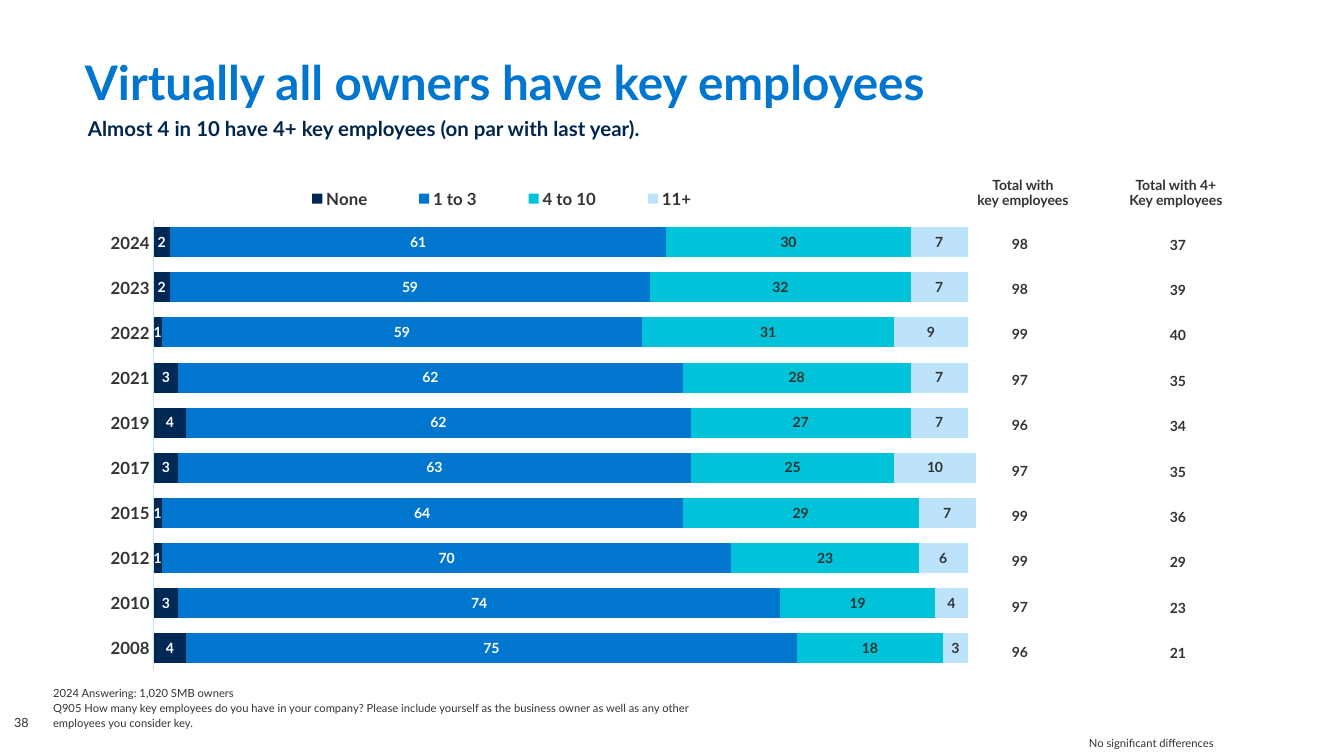
import pptx
import pptx.chart.data
import pptx.dml.color
import pptx.enum.chart
import pptx.enum.text
import pptx.oxml
import pptx.oxml.ns
import pptx.util

EMU_PER_PX = 914400 / 100.8
FONT = "Lato"
GREY, BLUE, NAVY, PALE = "333333", "0076CF", "00264C", "BDE3FC"

ALIGN = pptx.enum.text.PP_ALIGN
ANCHOR = pptx.enum.text.MSO_ANCHOR

YEARS = [2008, 2010, 2012, 2015, 2017, 2019, 2021, 2022, 2023, 2024]
# name, bar colour, label colour, percentages by year
SERIES = [
    ("None", "002855", "FFFFFF", [4, 3, 1, 1, 3, 4, 3, 1, 2, 2]),
    ("1 to 3", BLUE, "FFFFFF", [75, 74, 70, 64, 63, 62, 62, 59, 59, 61]),
    ("4 to 10", "00C3D9", GREY, [18, 19, 23, 29, 25, 27, 28, 31, 32, 30]),
    ("11+", PALE, GREY, [3, 4, 6, 7, 10, 7, 7, 9, 7, 7]),
]


def px(length):
    return pptx.util.Emu(round(length * EMU_PER_PX))


def rgb(code):
    return pptx.dml.color.RGBColor.from_string(code)


def set_all(target, values):
    for name, value in values.items():
        setattr(target, name, value)


def style_font(font, size, color=GREY, bold=False):
    set_all(font, {"name": FONT, "size": pptx.util.Pt(size), "bold": bold})
    font.color.rgb = rgb(color)


def add_text(page, place, lines, size, color=GREY, bold=False, inset=(0, 0),
             frame_format=None, para_format=None):
    box = page.shapes.add_textbox(*map(px, place))
    frame = box.text_frame
    side, end = map(px, inset)
    set_all(frame, {"word_wrap": True, "margin_left": side, "margin_right": side,
                    "margin_top": end, "margin_bottom": end})
    set_all(frame, frame_format or {})
    for index, line in enumerate(lines):
        para = frame.add_paragraph() if index else frame.paragraphs[0]
        set_all(para, para_format or {})
        span = para.add_run()
        span.text = line
        style_font(span.font, size, color, bold)


def add_totals(page, place, totals):
    table = page.shapes.add_table(len(totals), 1, *map(px, place)).table
    set_all(table, {"first_row": False, "horz_banding": False})
    for row, total in zip(table.rows, totals):
        cell = row.cells[0]
        cell.fill.background()
        set_all(cell, {"vertical_anchor": ANCHOR.MIDDLE, "margin_left": px(5),
                       "margin_right": px(5), "margin_top": px(5),
                       "margin_bottom": px(5)})
        para = cell.text_frame.paragraphs[0]
        para.alignment = ALIGN.CENTER
        span = para.add_run()
        span.text = str(total)
        style_font(span.font, 10, bold=True)


def make_layout(x, y, width, height, inner=False):
    """Manual placement of a chart part, in fractions of the chart area."""
    fields = [("layoutTarget", "inner")] if inner else []
    fields += [("xMode", "edge"), ("yMode", "edge"),
               ("x", x), ("y", y), ("w", width), ("h", height)]
    body = "".join(f'<c:{name} val="{value}"/>' for name, value in fields)
    return pptx.oxml.parse_xml(
        f'<c:layout {pptx.oxml.ns.nsdecls("c")}>'
        f'<c:manualLayout>{body}</c:manualLayout></c:layout>')


def replace_layout(parent, layout, index):
    for old in parent.findall(pptx.oxml.ns.qn("c:layout")):
        parent.remove(old)
    parent.insert(index, layout)


def add_bars(page, place):
    data = pptx.chart.data.CategoryChartData()
    data.categories = [str(year) for year in YEARS]
    for name, _, _, values in SERIES:
        data.add_series(name, values)
    kind = pptx.enum.chart.XL_CHART_TYPE.BAR_STACKED
    chart = page.shapes.add_chart(kind, *map(px, place), data).chart
    chart.has_title = False
    style_font(chart.font, 12)

    # Bars and their labels
    plot = chart.plots[0]
    set_all(plot, {"gap_width": 50, "overlap": 100, "vary_by_categories": False})
    for series, (_, color, label_color, _) in zip(plot.series, SERIES):
        series.format.fill.solid()
        series.format.fill.fore_color.rgb = rgb(color)
        labels = series.data_labels
        set_all(labels, {"show_value": True,
                         "position": pptx.enum.chart.XL_LABEL_POSITION.CENTER})
        style_font(labels.font, 10, label_color, True)

    # Axes
    years = chart.category_axis
    no_tick = pptx.enum.chart.XL_TICK_MARK.NONE
    set_all(years, {"major_tick_mark": no_tick, "minor_tick_mark": no_tick})
    style_font(years.tick_labels.font, 12, bold=True)
    years.format.line.color.rgb = rgb(PALE)
    years.format.line.width = pptx.util.Pt(0.75)
    set_all(chart.value_axis, {"visible": False, "has_major_gridlines": False,
                               "minimum_scale": 0, "maximum_scale": 120})

    # Legend and plot placement
    chart.has_legend = True
    legend = chart.legend
    set_all(legend, {"include_in_layout": False,
                     "position": pptx.enum.chart.XL_LEGEND_POSITION.TOP})
    style_font(legend.font, 12, bold=True)
    position = legend._element.find(pptx.oxml.ns.qn("c:legendPos"))
    replace_layout(legend._element, make_layout(0.22, 0.01, 0.39, 0.05),
                   legend._element.index(position) + 1)
    area = chart._chartSpace.chart.plotArea
    replace_layout(area, make_layout(0.127, 0.075, 0.808, 0.847, True), 0)


def main():
    deck = pptx.Presentation()
    set_all(deck, {"slide_width": px(1344), "slide_height": px(756)})
    page = deck.slides.add_slide(deck.slide_layouts[6])

    # Chart
    add_bars(page, (0, 180, 1209, 532))

    # Title and subtitle
    add_text(page, (85, 42, 996, 79), ["Virtually all owners have key employees"],
             34, BLUE, True, frame_format={"vertical_anchor": ANCHOR.MIDDLE})
    add_text(page, (78, 111, 1209, 31),
             ["Almost 4 in 10 have 4+ key employees (on par with last year)."],
             14.6, NAVY, True, inset=(10, 5))

    # Total columns, newest year first
    none, _, four_to_ten, eleven_up = [values for *_, values in SERIES]
    with_any = [100 - share for share in reversed(none)]
    with_four = [a + b for a, b in zip(reversed(four_to_ten), reversed(eleven_up))]
    columns = [
        (963, ["Total with", "key employees"], (987, 221, 66, 454), with_any),
        (1116, ["Total with 4+", "Key employees"], (1145, 222, 66, 454), with_four),
    ]
    for left, heading, place, totals in columns:
        add_text(page, (left, 171, 120, 43), heading, 10, bold=True, inset=(0, 7),
                 para_format={"alignment": ALIGN.CENTER, "line_spacing": 0.9})
        add_totals(page, place, totals)

    # Footnotes and page number
    bottom = {"vertical_anchor": ANCHOR.BOTTOM}
    note = {"line_spacing": 0.9, "space_after": pptx.util.Pt(2)}
    add_text(page, (53, 690, 1229, 40), [
        "2024 Answering: 1,020 SMB owners",
        "Q905 How many key employees do you have in your company? Please include "
        "yourself as the business owner as well as any other",
        "employees you consider key.",
    ], 8, frame_format=bottom, para_format=note)
    add_text(page, (14, 690, 39, 40), ["38"], 9, frame_format=bottom)
    add_text(page, (1089, 733, 294, 17), ["No significant differences"], 8,
             frame_format=bottom, para_format=note)

    deck.save("out.pptx")


if __name__ == "__main__":
    main()
